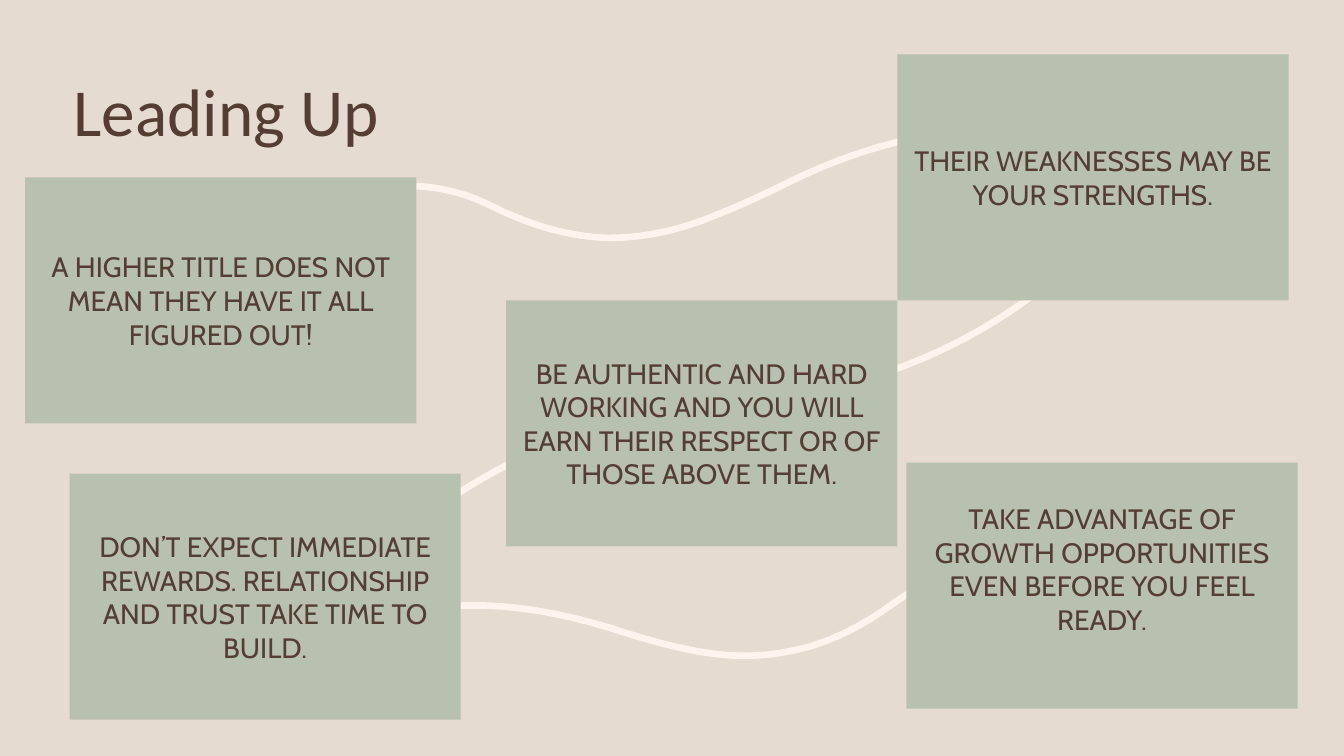
"""Build the "Leading Up" slide: five advice cards joined by winding paths."""
import pptx
import pptx.dml.color
import pptx.enum.shapes
import pptx.enum.text
import pptx.util

SAND = pptx.dml.color.RGBColor(0xE6, 0xDB, 0xD0)
SAGE = pptx.dml.color.RGBColor(0xB8, 0xC0, 0xB0)
CREAM = pptx.dml.color.RGBColor(0xFE, 0xF3, 0xED)
BROWN = pptx.dml.color.RGBColor(0x54, 0x3E, 0x34)

COLUMNS, ROWS = 1333, 750
CELL = pptx.util.Inches(0.01)
CARD_COLUMNS, CARD_ROWS = 388, 244
CURVE_STEPS = 16
LINE_ROWS = 33


def bezier(p0, p1, p2, p3, t):
    """Return the point at share t of a cubic curve, in EMU."""
    u = 1 - t
    return tuple(
        CELL * (u**3 * a + 3 * u**2 * t * b + 3 * u * t**2 * c + t**3 * d)
        for a, b, c, d in zip(p0, p1, p2, p3)
    )


def add_words(paragraph, words, font_name, size):
    """Add one brown run to a paragraph."""
    run = paragraph.add_run()
    run.text = words
    run.font.name = font_name
    run.font.size = pptx.util.Pt(size)
    run.font.color.rgb = BROWN


deck = pptx.Presentation()
deck.slide_width = COLUMNS * CELL
deck.slide_height = ROWS * CELL
slide = deck.slides.add_slide(deck.slide_layouts[5])
slide.background.fill.solid()
slide.background.fill.fore_color.rgb = SAND

heading = slide.shapes.title
heading.left, heading.top = 63 * CELL, 77 * CELL
heading.width, heading.height = 1000 * CELL, 74 * CELL
heading.text_frame.auto_size = pptx.enum.text.MSO_AUTO_SIZE.NONE
heading.text_frame.vertical_anchor = pptx.enum.text.MSO_ANCHOR.MIDDLE
heading_line = heading.text_frame.paragraphs[0]
heading_line.alignment = pptx.enum.text.PP_ALIGN.LEFT
heading_line.line_spacing = 0.9
add_words(heading_line, "Leading Up", "Calibri", 48)

winding_paths = [
    [(833, 383), (913, 363), (985, 327), (1047, 275)],
    [(584, 428), (509, 452), (445, 490), (389, 539)],
    [(307, 223), (350, 187), (398, 177), (449, 190),
     (466, 194), (481, 201), (497, 209),
     (530, 224), (565, 235), (604, 236),
     (637, 236), (670, 229), (701, 217),
     (737, 203), (757, 193), (778, 183),
     (801, 171), (940, 103), (1027, 146)],
    [(920, 579), (904, 586), (891, 595), (877, 605),
     (848, 625), (815, 641), (778, 647),
     (746, 653), (714, 651), (681, 644),
     (645, 636), (624, 629), (602, 622),
     (578, 615), (434, 570), (347, 636)],
]
for handles in winding_paths:
    trail = [
        bezier(*handles[first:first + 4], step / CURVE_STEPS)
        for first in range(0, len(handles) - 1, 3)
        for step in range(1, CURVE_STEPS + 1)
    ]
    start_x, start_y = handles[0]
    outline = slide.shapes.build_freeform(start_x * CELL, start_y * CELL)
    outline.add_line_segments(trail, close=False)
    winding_path = outline.convert_to_shape()
    winding_path.shadow.inherit = False
    winding_path.fill.background()
    winding_path.line.color.rgb = CREAM
    winding_path.line.width = pptx.util.Pt(4.75)

strengths_left, strengths_top = 890, 54
advice_cards = [
    (25, 176, 0, "A HIGHER TITLE DOES NOT MEAN THEY HAVE IT ALL FIGURED OUT!"),
    (strengths_left, strengths_top, 0, "THEIR WEAKNESSES MAY BE YOUR STRENGTHS."),
    (strengths_left - CARD_COLUMNS, strengths_top + CARD_ROWS, 0,
     "BE AUTHENTIC AND HARD WORKING AND YOU WILL EARN THEIR RESPECT OR OF THOSE ABOVE THEM."),
    (69, 470, 0,
     "DON’T EXPECT IMMEDIATE REWARDS. RELATIONSHIP AND TRUST TAKE TIME TO BUILD."),
    (899, 459, LINE_ROWS,
     "TAKE ADVANTAGE OF GROWTH OPPORTUNITIES EVEN BEFORE YOU FEEL READY."),
]
for column, row, rows_below, advice in advice_cards:
    card = slide.shapes.add_shape(
        pptx.enum.shapes.MSO_SHAPE.RECTANGLE,
        column * CELL, row * CELL, CARD_COLUMNS * CELL, CARD_ROWS * CELL)
    card.shadow.inherit = False
    card.fill.solid()
    card.fill.fore_color.rgb = SAGE
    card.line.fill.background()
    card.text_frame.word_wrap = True
    card.text_frame.vertical_anchor = pptx.enum.text.MSO_ANCHOR.MIDDLE
    card.text_frame.margin_bottom = (5 + rows_below) * CELL
    advice_line = card.text_frame.paragraphs[0]
    advice_line.alignment = pptx.enum.text.PP_ALIGN.CENTER
    add_words(advice_line, advice, "Cabin", 20)

deck.save("out.pptx")
